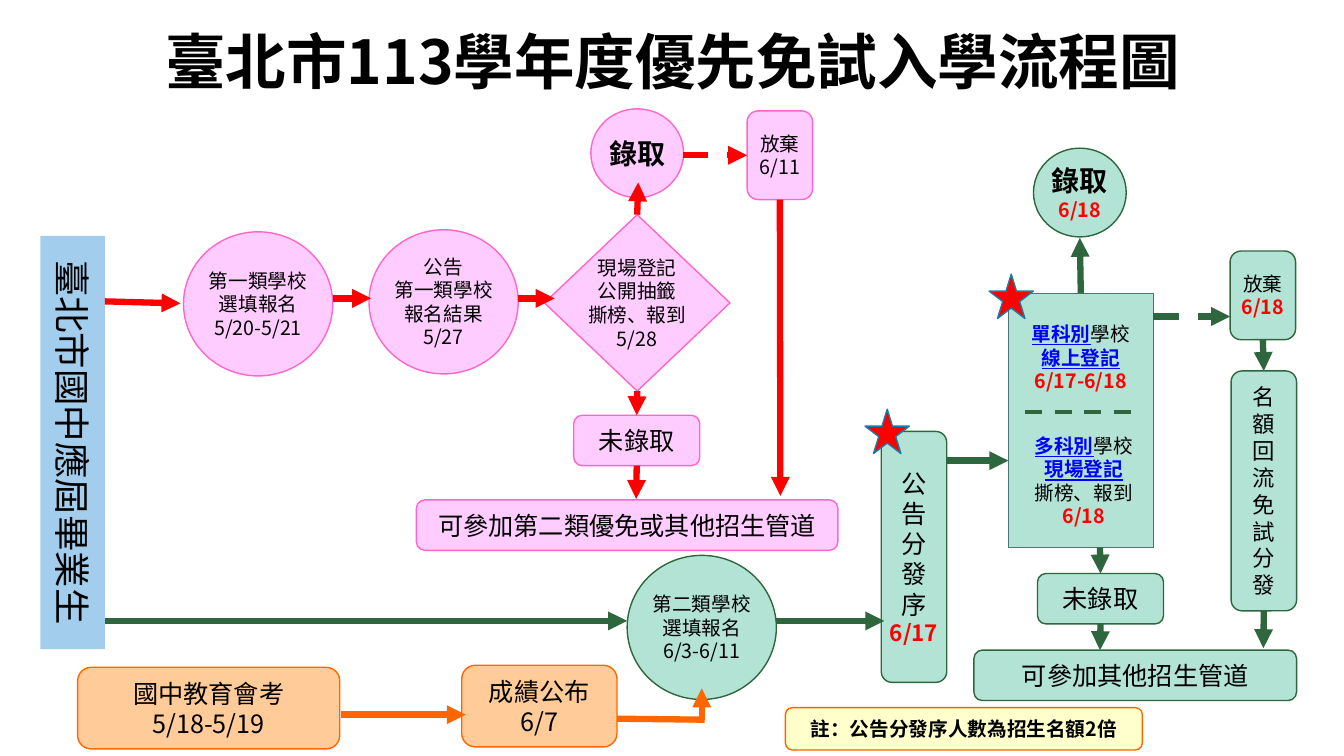
from pptx import Presentation
from pptx.dml.color import RGBColor
from pptx.enum.dml import MSO_LINE
from pptx.enum.shapes import MSO_CONNECTOR, MSO_SHAPE as Preset
from pptx.enum.text import MSO_ANCHOR, PP_ALIGN
from pptx.oxml.ns import qn
from pptx.util import Pt
from lxml.etree import SubElement

COLOURS = {
    "black": "000000", "red": "FF0000", "link": "0000FF",
    "pink": "FFCCFF", "pink line": "FF66CC",
    "mint": "B2E3D5", "green": "2E663E", "panel line": "477674",
    "peach": "FFCC99", "orange": "FF6600", "cream": "FFFFCC",
    "sky": "A2CDED", "star line": "147EA6",
}
PINK, MINT = ("pink", "pink line"), ("mint", "green")
PEACH, CREAM = ("peach", "orange"), ("cream", "orange")
RED = {"colour": "red", "bold": True}
LINK = {"colour": "link", "bold": True, "underline": True}
TOP, LEFT, BOTTOM, RIGHT = range(4)


class FlowSlide:
    """Draws flowchart elements on one slide, with lengths in px."""

    scale = 9144
    font_name = "Noto Sans CJK TC"

    def __init__(self, deck):
        self.slide = deck.slides.add_slide(deck.slide_layouts[6])

    def emu(self, *lengths):
        return [round(length * self.scale) for length in lengths]

    def colour(self, name):
        return RGBColor.from_string(COLOURS[name])

    def fill_text(self, box, lines, font_name=None, spacing=None, **style):
        frame = box.text_frame
        frame.word_wrap = False
        frame.vertical_anchor = MSO_ANCHOR.MIDDLE
        frame.margin_left = frame.margin_right = 0
        frame.margin_top = frame.margin_bottom = 0
        for index, line in enumerate(lines):
            para = frame.add_paragraph() if index else frame.paragraphs[0]
            para.alignment = PP_ALIGN.CENTER
            para.line_spacing = spacing
            for text, extra in [(line, {})] if isinstance(line, str) else line:
                span = para.add_run()
                span.text = text
                self.style_span(span, font_name or self.font_name, **{**style, **extra})

    def style_span(self, span, name, size=14, colour="black", bold=False, underline=False):
        font = span.font
        font.size, font.bold, font.underline = Pt(size), bold, underline
        font.color.rgb = self.colour(colour)
        font.name = name
        SubElement(font._element, qn("a:ea"), typeface=name)

    def text(self, area, lines, **style):
        box = self.slide.shapes.add_textbox(*self.emu(*area))
        self.fill_text(box, lines, **style)

    def node(self, preset, area, paint, lines=(), **style):
        shape = self.slide.shapes.add_shape(preset, *self.emu(*area))
        shape.shadow.inherit = False
        fill, line = paint
        shape.fill.solid()
        shape.fill.fore_color.rgb = self.colour(fill)
        if line:
            shape.line.color.rgb = self.colour(line)
            shape.line.width = Pt(1)
        else:
            shape.line.fill.background()
        self.fill_text(shape, lines, **style)
        return shape

    def line(self, colour, start, end, width=4.5, dashed=False, arrow=True):
        points = [(0, 0) if hasattr(point[0], "shape_id") else point
                  for point in (start, end)]
        link = self.slide.shapes.add_connector(
            MSO_CONNECTOR.STRAIGHT, *self.emu(*points[0], *points[1]))
        for point, join in ((start, link.begin_connect), (end, link.end_connect)):
            if hasattr(point[0], "shape_id"):
                join(*point)
        link.line.color.rgb = self.colour(colour)
        link.line.width = Pt(width)
        if dashed:
            link.line.dash_style = MSO_LINE.DASH
        if arrow:
            SubElement(link.line._get_or_add_ln(), qn("a:tailEnd"), type="triangle")
        SubElement(link._element.spPr, qn("a:effectLst"))


def draw_first_round(flow):
    circle, rounded = Preset.OVAL, Preset.ROUNDED_RECTANGLE
    flow.node(circle, (182, 230, 148, 143), PINK,
              ["第一類學校", "選填報名", "5/20-5/21"])
    flow.node(circle, (366, 228, 148, 143), PINK,
              ["公告", "第一類學校", "報名結果", "5/27"])
    flow.node(circle, (586, 108, 92, 88), PINK, ["錄取"], size=20, bold=True)
    draw = flow.node(Preset.DIAMOND, (540, 213, 184, 175), PINK,
                     ["現場登記", "公開抽籤", "撕榜、報到", "5/28"])
    declined = flow.node(rounded, (741, 110, 65, 88), PINK, ["放棄", "6/11"])
    rejected = flow.node(rounded, (569, 412, 125, 50), PINK, ["未錄取"], size=18)
    flow.node(rounded, (413, 496, 418, 50), PINK,
              ["可參加第二類優免或其他招生管道"], size=18)
    for start, end in [
        ((104, 299), (179, 301)),
        ((330, 296), (368, 296)),
        ((514, 296), (550, 296)),
        ((draw, TOP), (633, 181)),
        ((declined, BOTTOM), (774, 492)),
        ((draw, BOTTOM), (rejected, TOP)),
        ((rejected, BOTTOM), (631, 495)),
    ]:
        flow.line("red", start, end)
    flow.line("red", (677, 154), (declined, LEFT), dashed=True)


def draw_second_round(flow):
    rounded = Preset.ROUNDED_RECTANGLE
    flow.node(Preset.OVAL, (622, 551, 148, 143), MINT,
              ["第二類學校", "選填報名", "6/3-6/11"])
    flow.node(rounded, (874, 428, 65, 249), MINT,
              [*"公告分發序", [("6/17", {**RED, "size": 16})]], size=18)
    flow.node(Preset.OVAL, (1025, 147, 92, 88), MINT,
              [[("錄取", {"size": 20, "bold": True})], [("6/18", RED)]])
    rejected = flow.node(rounded, (1029, 569, 125, 50), MINT, ["未錄取"], size=18)
    flow.node(rounded, (966, 645, 320, 50), MINT, ["可參加其他招生管道"], size=18)
    declined = flow.node(rounded, (1220, 249, 65, 88), MINT,
                         ["放棄", [("6/18", RED)]])
    returned = flow.node(rounded, (1221, 368, 65, 238), MINT,
                         "名額回流免試分發", size=16)
    panel = flow.node(Preset.RECTANGLE, (1000, 291, 144, 252), ("mint", "panel line"))
    flow.text((998, 314, 148, 81), [
        [("單科別", LINK), ("學校", {})],
        [("線上登記", LINK)],
        [("6/17-6/18", RED)],
    ])
    flow.text((1001, 425, 148, 104), [
        [("多科別", LINK), ("學校", {})],
        [("現場登記", LINK)],
        "撕榜、報到",
        [("6/18", RED)],
    ])
    for start, end in [
        ((104, 616), (622, 616)),
        ((770, 616), (877, 616)),
        ((939, 457), (1000, 457)),
        ((panel, TOP), (1071, 236)),
        ((1091, 543), (rejected, TOP)),
        ((rejected, BOTTOM), (1091, 645)),
        ((declined, BOTTOM), (returned, TOP)),
        ((returned, BOTTOM), (1253, 643)),
    ]:
        flow.line("green", start, end)
    flow.line("green", (1144, 314), (1220, 314), dashed=True)
    flow.line("green", (1017, 409), (1131, 409), width=3, dashed=True, arrow=False)
    for left, top in ((981, 272), (858, 406)):
        flow.node(Preset.STAR_5_POINT, (left, top, 44, 44), ("red", "star line"))


def draw_exam(flow):
    rounded = Preset.ROUNDED_RECTANGLE
    flow.node(rounded, (77, 662, 260, 81), PEACH, ["國中教育會考", "5/18-5/19"], size=18)
    flow.node(rounded, (458, 660, 154, 81), PEACH, ["成績公布", "6/7"], size=18)
    flow.line("orange", (338, 709), (462, 709))
    flow.line("orange", (696, 713), (696, 683))
    flow.line("orange", (612, 713), (699, 714), arrow=False)
    flow.node(rounded, (779, 702, 354, 42), CREAM,
              ["註：公告分發序人數為招生名額2倍"], bold=True)


def main():
    deck = Presentation()
    deck.slide_width, deck.slide_height = 1333 * FlowSlide.scale, 750 * FlowSlide.scale
    flow = FlowSlide(deck)
    flow.text((117, 17, 1100, 95), ["臺北市113學年度優先免試入學流程圖"],
              size=43.2, bold=True, spacing=0.9)
    graduates = flow.node(Preset.RECTANGLE, (-133, 407, 410, 64), ("sky", None),
                          ["臺北市國中應屆畢業生"], font_name="Lato", size=26)
    graduates.rotation = 90
    draw_first_round(flow)
    draw_second_round(flow)
    draw_exam(flow)
    deck.save("out.pptx")


if __name__ == "__main__":
    main()
